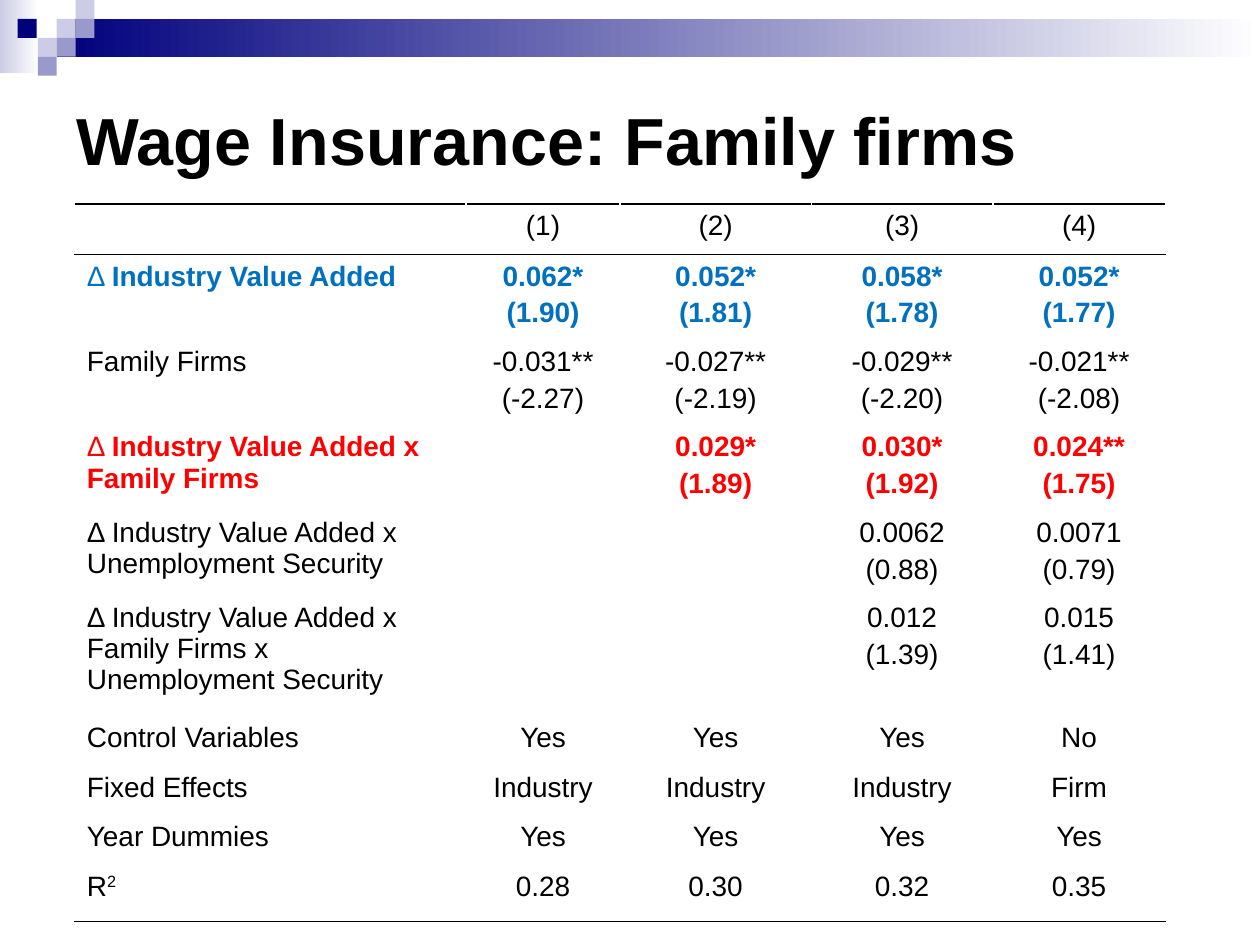
from pptx import Presentation, util as u
from pptx.dml.color import RGBColor
from pptx.enum import shapes, text
from pptx.oxml import parse_xml
from pptx.oxml.ns import nsdecls

BLACK, BLUE, RED = "000000", "0070C0", "FF0000"
NAVY, PALE, MID, WHITE = "00007D", "CCCCE6", "9999CC", "FFFFFF"
TITLE = "Wage Insurance: Family firms"

BANDS = [(0, 0, 0.31, 0.58, PALE), (0.45, 0.15, 9.55, 0.3, NAVY)]
TILES = [
    (0.45, 0.15, PALE), (0.6, 0, PALE), (0.6, 0.15, MID), (0.3, 0.3, PALE),
    (0.14, 0.15, NAVY), (0.45, 0.3, MID), (0.3, 0.45, MID),
]

COLS = [3.11, 1.22, 1.52, 1.44, 1.37]
ROWS = [
    (0.38, BLACK, "", ["(1)", "(2)", "(3)", "(4)"]),
    (0.65, BLUE, "Δ Industry Value Added",
     ["0.062* (1.90)", "0.052* (1.81)", "0.058* (1.78)", "0.052* (1.77)"]),
    (0.65, BLACK, "Family Firms",
     ["-0.031** (-2.27)", "-0.027** (-2.19)", "-0.029** (-2.20)", "-0.021** (-2.08)"]),
    (0.67, RED, "Δ Industry Value Added x Family Firms",
     ["", "0.029* (1.89)", "0.030* (1.92)", "0.024** (1.75)"]),
    (0.67, BLACK, "Δ Industry Value Added x Unemployment Security",
     ["", "", "0.0062 (0.88)", "0.0071 (0.79)"]),
    (0.95, BLACK, "Δ Industry Value Added x Family Firms x Unemployment Security",
     ["", "", "0.012 (1.39)", "0.015 (1.41)"]),
    (0.4, BLACK, "Control Variables", ["Yes", "Yes", "Yes", "No"]),
    (0.39, BLACK, "Fixed Effects", ["Industry", "Industry", "Industry", "Firm"]),
    (0.39, BLACK, "Year Dummies", ["Yes"] * 4),
    (0.45, BLACK, "R2", ["0.28", "0.30", "0.32", "0.35"]),
]
LAST = len(ROWS) - 1
RULES = {0: ["lnT", "lnB"], 1: ["lnT"], LAST: ["lnB"]}


def color(code):
    return RGBColor.from_string(code)


def add_run(para, words, size, code=BLACK, bold=False):
    run = para.add_run()
    run.text = words
    run.font.name = "Arial"
    run.font.size = u.Pt(size)
    run.font.bold = bold
    run.font.color.rgb = color(code)
    return run


def add_rect(slide, left, top, width, height):
    rect = slide.shapes.add_shape(
        shapes.MSO_SHAPE.RECTANGLE, *map(u.Inches, (left, top, width, height)))
    rect.shadow.inherit = False
    rect.line.fill.background()
    return rect.fill


def add_rule(cell, side):
    cell._tc.get_or_add_tcPr().append(parse_xml(
        f'<a:{side} {nsdecls("a")} w="12700"><a:solidFill>'
        f'<a:srgbClr val="{BLACK}"/></a:solidFill></a:{side}>'))


def fill_label(para, label, code):
    if label == "R2":
        add_run(para, "R", 16)
        add_run(para, "2", 16).font._element.set("baseline", "30000")
    elif code != BLACK:
        add_run(para, label[:2], 16, code)
        add_run(para, label[2:], 16, code, True)
    elif label:
        add_run(para, label, 16)


def fill_value(frame, value, code):
    for i, part in enumerate(value.split()):
        para = frame.add_paragraph() if i else frame.paragraphs[0]
        para.alignment = text.PP_ALIGN.CENTER
        add_run(para, part, 16, code, code != BLACK)


def add_grid(slide):
    grid = slide.shapes.add_table(
        len(ROWS), len(COLS), u.Inches(0.59), u.Inches(1.62),
        u.Inches(sum(COLS)), u.Inches(sum(row[0] for row in ROWS))).table
    grid.first_row = grid.horz_banding = False
    for col, width in zip(grid.columns, COLS):
        col.width = u.Inches(width)
    for r, (height, code, label, values) in enumerate(ROWS):
        grid.rows[r].height = u.Inches(height)
        for c, value in enumerate([label] + values):
            cell = grid.cell(r, c)
            for side in RULES.get(r, []):
                add_rule(cell, side)
            cell.fill.background()
            frame = cell.text_frame
            if c:
                fill_value(frame, value, code)
            else:
                fill_label(frame.paragraphs[0], label, code)
            for para in frame.paragraphs:
                para.space_before = u.Pt(3.2)


def main():
    deck = Presentation()
    deck.slide_width, deck.slide_height = u.Inches(10), u.Inches(7.5)
    slide = deck.slides.add_slide(deck.slide_layouts[6])

    for *place, code in BANDS:
        fill = add_rect(slide, *place)
        fill.gradient()
        fill.gradient_angle = 0
        for stop, spot, shade in zip(fill.gradient_stops, (0, 1), (code, WHITE)):
            stop.position = spot
            stop.color.rgb = color(shade)
    for left, top, code in TILES:
        fill = add_rect(slide, left, top, 0.15, 0.15)
        fill.solid()
        fill.fore_color.rgb = color(code)

    frame = slide.shapes.add_textbox(
        *map(u.Inches, (0.51, 0.5, 8.99, 1.2))).text_frame
    frame.word_wrap = True
    frame.vertical_anchor = text.MSO_ANCHOR.MIDDLE
    add_run(frame.paragraphs[0], TITLE, 38, bold=True)

    add_grid(slide)
    deck.save("out.pptx")


if __name__ == "__main__":
    main()
